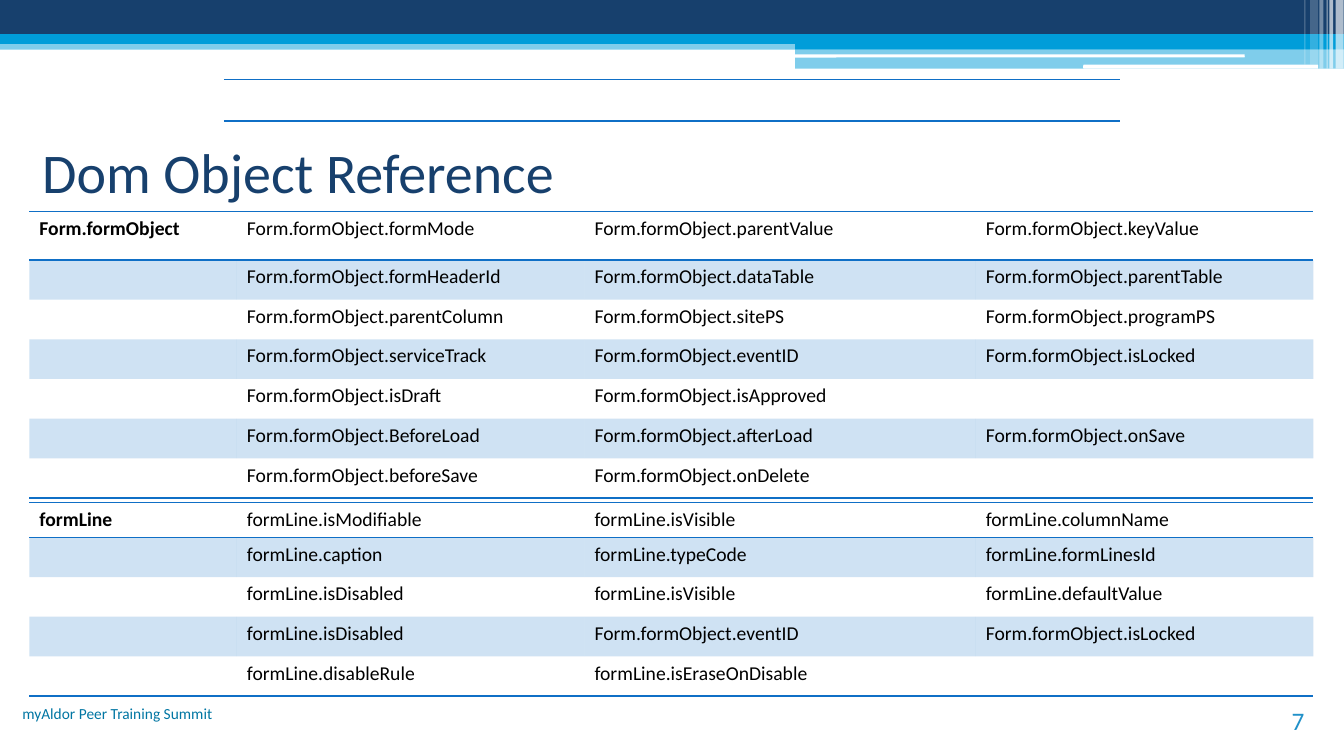
from pptx import Presentation
from pptx.dml.color import RGBColor
from pptx.enum.shapes import MSO_SHAPE
from pptx.enum.text import MSO_ANCHOR, PP_ALIGN
from pptx.oxml import parse_xml
from pptx.oxml.ns import nsdecls, qn
from pptx.util import Cm, Pt

RECT, ROUND = MSO_SHAPE.RECTANGLE, MSO_SHAPE.ROUNDED_RECTANGLE
LEFT, RIGHT = PP_ALIGN.LEFT, PP_ALIGN.RIGHT
TOP, MIDDLE, BOTTOM = MSO_ANCHOR.TOP, MSO_ANCHOR.MIDDLE, MSO_ANCHOR.BOTTOM
PLAIN = "{2D5ABB26-0587-4C30-8999-92F81FD0307C}"


class Theme:
    font = "Calibri"
    navy, sky, white, black = "17406D", "009DD9", "FFFFFF", "000000"
    rule, foot, page = "0F6FC6", "0076A3", "2191C9"
    title_size, page_size, cell_size, foot_size = 40, 18, 14, 11


def paint(fill, props, color, alpha):
    fill.solid()
    fill.fore_color.rgb = RGBColor.from_string(color)
    if alpha < 100:
        clr = props.find(qn("a:solidFill")).find(qn("a:srgbClr"))
        clr.append(parse_xml(f'<a:alpha {nsdecls("a")} val="{alpha * 1000}"/>'))


def write(frame, text, size, color, align=LEFT, anchor=TOP, bold=False):
    frame.text = text
    frame.word_wrap = True
    frame.vertical_anchor = anchor
    para = frame.paragraphs[0]
    para.alignment = align
    font = para.runs[0].font
    font.name, font.size, font.bold = Theme.font, Pt(size), bold
    font.color.rgb = RGBColor.from_string(color)


deck = Presentation()
deck.slide_width, deck.slide_height = Cm(33.87), Cm(19.05)
slide = deck.slides.add_slide(deck.slide_layouts[5])
shapes = slide.shapes

# Header bands and the fading strips at the right edge
bands = [
    (RECT, 0, 1.02, 33.87, 0.23, Theme.sky, 50),
    (RECT, 0, 0, 33.87, 0.86, Theme.navy, 100),
    (RECT, 0, 0.86, 33.87, 0.25, Theme.sky, 100),
    (RECT, 20.04, 0.99, 13.83, 0.25, Theme.sky, 100),
    (RECT, 20.04, 1.22, 13.83, 0.51, Theme.sky, 50),
    (ROUND, 20.02, 1.37, 11.35, 0.08, Theme.white, 100),
    (ROUND, 27.3, 1.63, 5.92, 0.1, Theme.white, 100),
]
strips = [
    (33.66, 0.2, 1.73, 65), (33.5, 0.1, 1.73, 65), (33.43, 0.03, 1.73, 60),
    (33.25, 0.1, 1.73, 40), (33.02, 0.2, 1.63, 20), (32.87, 0.03, 1.63, 30),
]
bands += [(RECT, x, 0, w, h, Theme.white, a) for x, w, h, a in strips]
for kind, x, y, w, h, color, alpha in bands:
    band = shapes.add_shape(kind, Cm(x), Cm(y), Cm(w), Cm(h))
    band.shadow.inherit = False
    band.line.fill.background()
    paint(band.fill, band._element.spPr, color, alpha)

# Title
title = shapes.title
title.left, title.top, title.width, title.height = Cm(0.81), Cm(2.82), Cm(30.48), Cm(2.97)
write(title.text_frame, "Dom Object Reference", Theme.title_size, Theme.navy, anchor=MIDDLE)

# Footer and page number
notes = [
    (0, 17.63, 5.61, 1.27, "myAldor Peer Training Summit", Theme.foot_size, Theme.foot, TOP),
    (30.3, 17.65, 2.82, 1.02, "7", Theme.page_size, Theme.page, BOTTOM),
]
for x, y, w, h, text, size, color, anchor in notes:
    box = shapes.add_textbox(Cm(x), Cm(y), Cm(w), Cm(h))
    write(box.text_frame, text, size, color, RIGHT, anchor)

# Tables: left, top, column widths, head row height, cell texts
cols = [5.23, 8.76, 9.86, 8.51]
form = [
    ["Form.formObject", "Form.formObject.formMode", "Form.formObject.parentValue", "Form.formObject.keyValue"],
    ["", "Form.formObject.formHeaderId", "Form.formObject.dataTable", "Form.formObject.parentTable"],
    ["", "Form.formObject.parentColumn", "Form.formObject.sitePS", "Form.formObject.programPS"],
    ["", "Form.formObject.serviceTrack", "Form.formObject.eventID", "Form.formObject.isLocked"],
    ["", "Form.formObject.isDraft", "Form.formObject.isApproved", ""],
    ["", "Form.formObject.BeforeLoad", "Form.formObject.afterLoad", "Form.formObject.onSave"],
    ["", "Form.formObject.beforeSave", "Form.formObject.onDelete", ""],
]
line = [
    ["formLine", "formLine.isModifiable", "formLine.isVisible", "formLine.columnName"],
    ["", "formLine.caption", "formLine.typeCode", "formLine.formLinesId"],
    ["", "formLine.isDisabled", "formLine.isVisible", "formLine.defaultValue"],
    ["", "formLine.isDisabled", "Form.formObject.eventID", "Form.formObject.isLocked"],
    ["", "formLine.disableRule", "formLine.isEraseOnDisable", ""],
]
tables = [
    (5.64, 2.01, [22.58], 1.04, [[""]]),
    (0.74, 5.33, cols, 1.22, form),
    (0.74, 12.67, cols, 0.87, line),
]
for x, y, widths, head, data in tables:
    heights = [head] + [1] * (len(data) - 1)
    frame = shapes.add_table(len(data), len(widths), Cm(x), Cm(y), Cm(sum(widths)), Cm(sum(heights)))
    grid = frame.table
    grid.first_row = grid.horz_banding = False
    grid._tbl.tblPr.find(qn("a:tableStyleId")).text = PLAIN
    for col, width in zip(grid.columns, widths):
        col.width = Cm(width)
    for r, texts in enumerate(data):
        grid.rows[r].height = Cm(heights[r])
        for c, text in enumerate(texts):
            cell = grid.cell(r, c)
            props = cell._tc.get_or_add_tcPr()
            if r % 2:
                paint(cell.fill, props, Theme.rule, 20)
            else:
                cell.fill.background()
            # Rules above and below the head row, and under the last row
            sides = ["lnB"] if r in (0, len(data) - 1) else []
            sides += ["lnT"] if r == 0 else []
            for side in sides:
                props.insert(0, parse_xml(
                    f'<a:{side} {nsdecls("a")} w="12700"><a:solidFill>'
                    f'<a:srgbClr val="{Theme.rule}"/></a:solidFill></a:{side}>'))
            if text:
                write(cell.text_frame, text, Theme.cell_size, Theme.black, bold=c == 0)
            else:
                end = cell.text_frame.paragraphs[0]._p.get_or_add_endParaRPr()
                end.set("sz", str(Theme.cell_size * 100))

deck.save("out.pptx")
